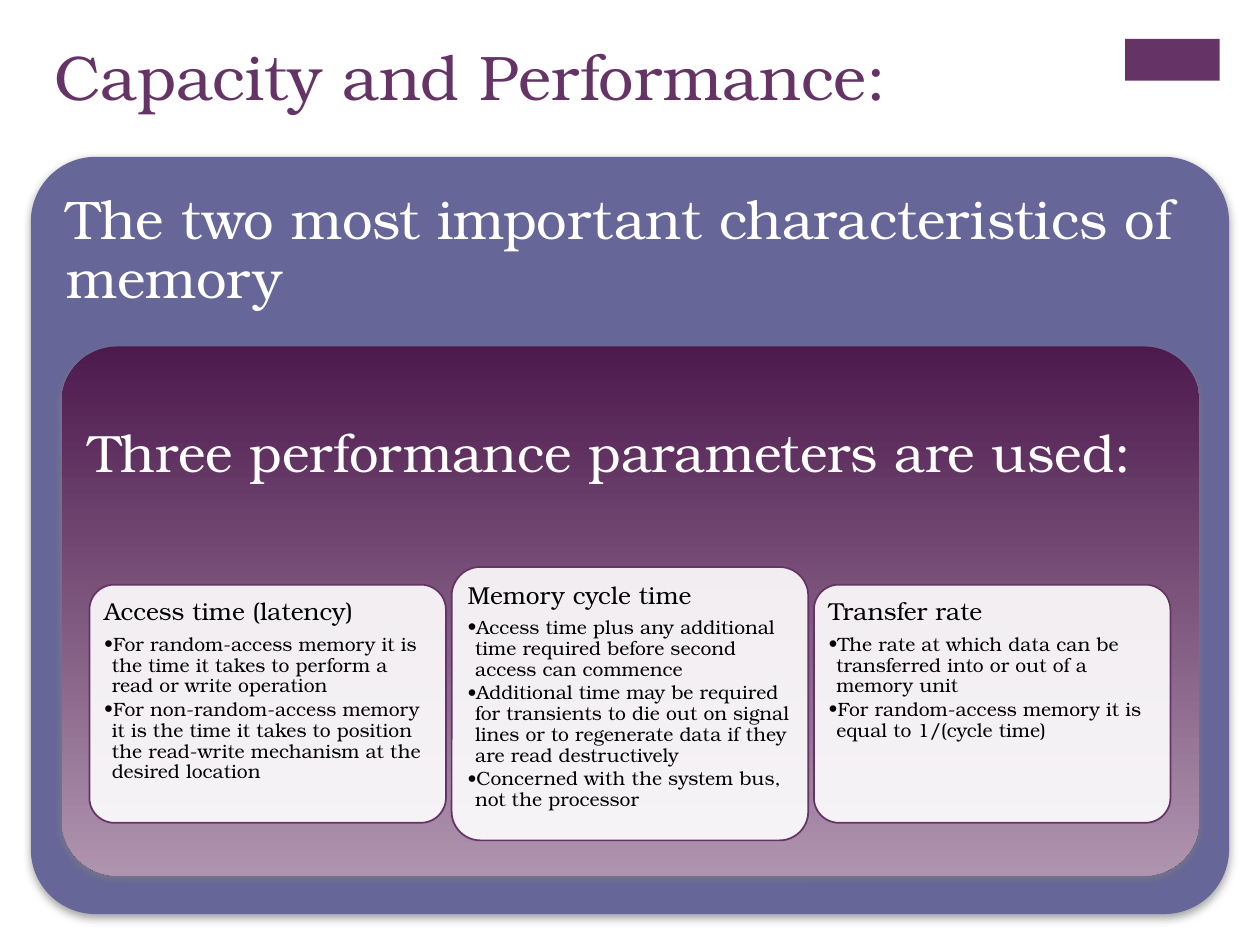
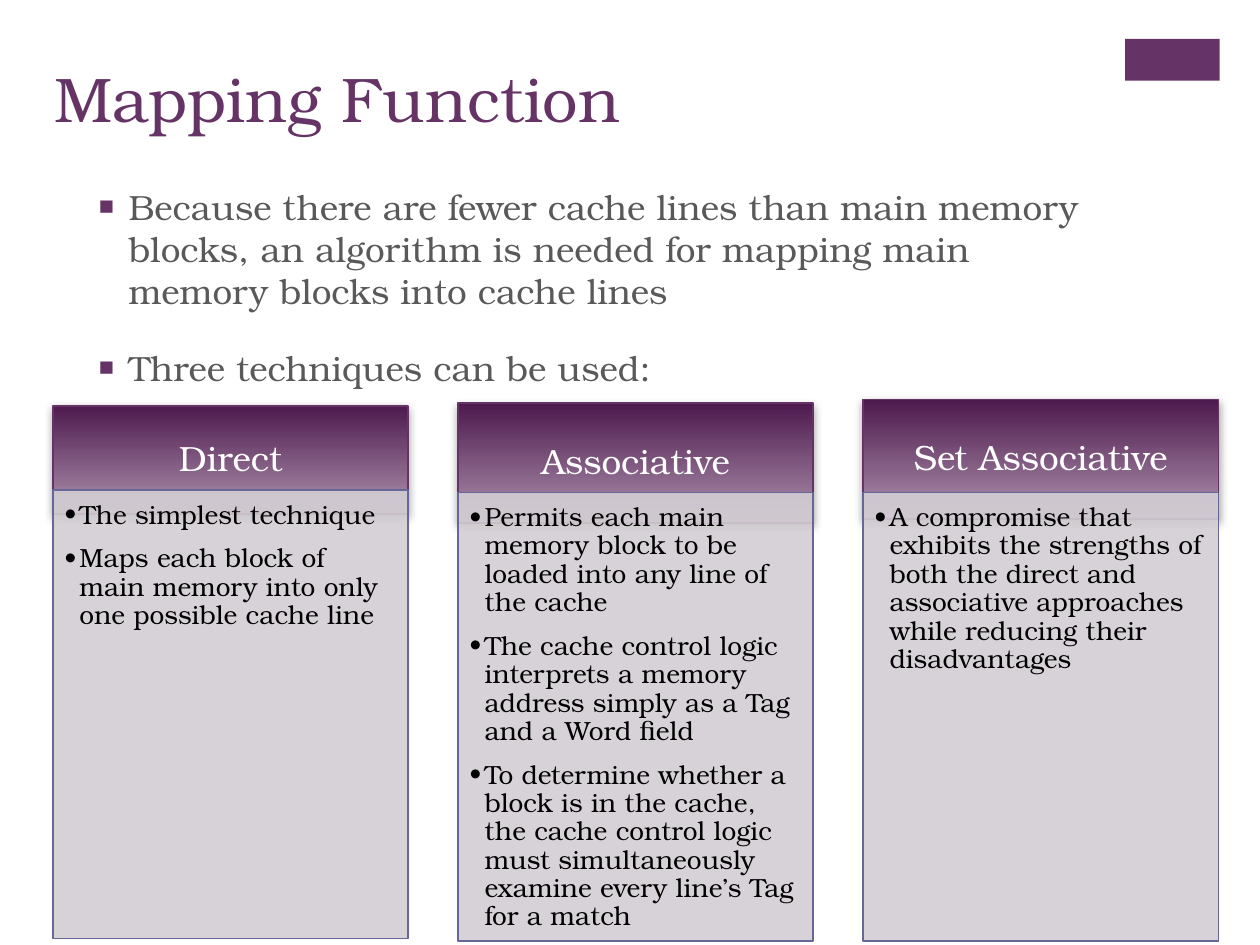
"""Build two slides on memory performance and cache mapping."""
from pptx import Presentation
from pptx.dml.color import RGBColor
from pptx.enum.shapes import MSO_SHAPE
from pptx.enum.text import MSO_ANCHOR, MSO_AUTO_SIZE, PP_ALIGN
from pptx.oxml import parse_xml
from pptx.oxml.ns import nsdecls, qn
from pptx.util import Inches, Pt

RECT, ROUND = MSO_SHAPE.RECTANGLE, MSO_SHAPE.ROUNDED_RECTANGLE
TOP, MIDDLE = MSO_ANCHOR.TOP, MSO_ANCHOR.MIDDLE
LEFT, CENTER = PP_ALIGN.LEFT, PP_ALIGN.CENTER
NONE = MSO_AUTO_SIZE.NONE
FONT = "TeX Gyre Bonum"
HUES = {"plum": "663366", "slate": "666699", "deep": "4D1A4D", "mauve": "AF94AF",
        "pale": "D3CED3", "white": "FFFFFF", "black": "000000", "text": "595959",
        "shade": "808080"}

deck = Presentation()
deck.slide_width, deck.slide_height = Inches(10), Inches(7.5)
COL, ROW = deck.slide_width / 100, deck.slide_height / 75

LOOKS = {
    "tag": {"fill": "plum"},
    "panel": {"fill": "slate", "line": ("slate", 0.75), "shade": True},
    "inner": {"fill": ("deep", "mauve"), "shade": True},
    "card": {"fill": "white", "alpha": 90, "line": ("plum", 1)},
    "band": {"fill": ("deep", "mauve"), "line": ("plum", 1), "shade": True},
    "list": {"fill": "pale", "alpha": 90, "line": ("slate", 1)},
}
TEXTS = {
    "title": {"size": 36, "hue": "plum"},
    "body": {"size": 20, "hue": "text", "before": 20, "mark": "■", "dent": 2.5,
             "tint": "plum", "scale": 75},
    "panel": {"size": 31, "hue": "white", "line": 0.9},
    "inner": {"size": 30, "hue": "white", "line": 0.9},
    "head": {"size": 14, "hue": "black", "line": 0.9, "after": 4.9},
    "point": {"size": 11, "hue": "black", "line": 0.9, "after": 1.65, "mark": "•", "dent": 0.6},
    "band": {"size": 20, "hue": "white", "line": 0.9, "align": CENTER},
    "list": {"size": 15, "hue": "black", "line": 0.9, "after": 8.7, "mark": "•", "dent": 1.2},
}


def box(slide, kind, at, look, pads=(1, 0.5, 1, 0.5), bend=None):
    """Draw a styled shape on the grid."""
    left, top, wide, high = at
    shape = slide.shapes.add_shape(kind, int(left * COL), int(top * ROW),
                                   int(wide * COL), int(high * ROW))
    if bend:
        shape.adjustments[0] = bend
    style = LOOKS[look]
    hue = style["fill"]
    if isinstance(hue, tuple):
        shape.fill.gradient()
        shape.fill.gradient_angle = 270
        for stop, name, spot in zip(shape.fill.gradient_stops, hue, (0, 1)):
            stop.color.rgb = RGBColor.from_string(HUES[name])
            stop.position = spot
    else:
        shape.fill.solid()
        shape.fill.fore_color.rgb = RGBColor.from_string(HUES[hue])
    props = shape._element.spPr
    if "alpha" in style:
        props.find(".//" + qn("a:srgbClr")).append(
            parse_xml(f'<a:alpha {nsdecls("a")} val="{style["alpha"] * 1000}"/>'))
    if "line" in style:
        name, width = style["line"]
        shape.line.color.rgb = RGBColor.from_string(HUES[name])
        shape.line.width = Pt(width)
    else:
        shape.line.fill.background()
    shape.shadow.inherit = False
    if "shade" in style:
        props.find(qn("a:effectLst")).append(parse_xml(
            f'<a:outerShdw {nsdecls("a")} blurRad="{Pt(5)}" dist="{Pt(2)}" dir="5400000" '
            f'rotWithShape="0"><a:srgbClr val="{HUES["shade"]}"><a:alpha val="75000"/>'
            '</a:srgbClr></a:outerShdw>'))
    for side, pad in zip(("left", "top", "right", "bottom"), pads):
        setattr(shape.text_frame, "margin_" + side, int(pad * COL))
    return shape


def write(frame, lines, look, anchor=TOP):
    """Add styled paragraphs to a text frame."""
    style = TEXTS[look]
    frame.word_wrap, frame.auto_size, frame.vertical_anchor = True, NONE, anchor
    for line in lines:
        first = not frame.text
        para = frame.paragraphs[0] if first else frame.add_paragraph()
        form = {"alignment": style.get("align", LEFT),
                "line_spacing": style.get("line", 1.0),
                "space_before": Pt(0 if first else style.get("before", 0)),
                "space_after": Pt(style.get("after", 0))}
        for key, value in form.items():
            setattr(para, key, value)
        if "mark" in style:
            props = para._p.get_or_add_pPr()
            dent = int(style["dent"] * COL)
            props.set("marL", str(dent))
            props.set("indent", str(-dent))
            tint = HUES[style.get("tint", style["hue"])]
            for part in (f'buClr {nsdecls("a")}><a:srgbClr val="{tint}"/></a:buClr>',
                         f'buSzPct {nsdecls("a")} val="{style.get("scale", 100) * 1000}"/>',
                         f'buFont {nsdecls("a")} typeface="{FONT}"/>',
                         f'buChar {nsdecls("a")} char="{style["mark"]}"/>'):
                props.append(parse_xml("<a:" + part))
        run = para.add_run()
        run.text = line
        for key, value in {"name": FONT, "size": Pt(style["size"]), "bold": False}.items():
            setattr(run.font, key, value)
        run.font.color.rgb = RGBColor.from_string(HUES[style["hue"]])


slides = []
for layout, name, top, high in ((5, "Capacity and Performance:", 2.5, 12.2),
                                (1, "Mapping Function", 4.2, 10.5)):
    slide = deck.slides.add_slide(deck.slide_layouts[layout])
    title = slide.shapes.title
    title.left, title.top = int(3.3 * COL), int(top * ROW)
    title.width, title.height = int(82.6 * COL), int(high * ROW)
    write(title.text_frame, [name], "title")
    slides.append(slide)
speed, cache = slides

tag = box(speed, RECT, (89.3, 3.1, 7.5, 3.3), "tag")
tag._element.nvSpPr.cNvPr.set("id", "20")
deck.slide_master.shapes._spTree.append(tag._element)

panel = box(speed, ROUND, (2.5, 12.5, 95, 60), "panel", (1.3,) * 4, 0.085)
write(panel.text_frame, ["The two most important characteristics of memory"], "panel")
inner = box(speed, ROUND, (4.9, 27.5, 90.3, 42), "inner", (0.8, 5.1, 0.8, 0.8), 0.105)
write(inner.text_frame, ["Three performance parameters are used:"], "inner")

CARDS = [
    ("Access time (latency)", 46.4, 18.9, [
        "For random-access memory it is the time it takes to perform a read or write operation",
        "For non-random-access memory it is the time it takes to position the read-write "
        "mechanism at the desired location"]),
    ("Memory cycle time", 45, 21.7, [
        "Access time plus any additional time required before second access can commence",
        "Additional time may be required for transients to die out on signal lines or to "
        "regenerate data if they are read destructively",
        "Concerned with the system bus, not the processor"]),
    ("Transfer rate", 46.4, 18.9, [
        "The rate at which data can be transferred into or out of a memory unit",
        "For random-access memory it is equal to 1/(cycle time)"]),
]
for num, (head, top, high, points) in enumerate(CARDS):
    card = box(speed, ROUND, (7.1 + num * 28.75, top, 28.3, high), "card", (0.6,) * 4, 0.105)
    write(card.text_frame, [head], "head")
    write(card.text_frame, points, "point")

body = cache.placeholders[1]
body.left, body.top = int(6.7 * COL), int(14.2 * ROW)
body.width, body.height = int(82.6 * COL), int(20.8 * ROW)
write(body.text_frame, [
    "Because there are fewer cache lines than main memory blocks, an algorithm is needed "
    "for mapping main memory blocks into cache lines",
    "Three techniques can be used:"], "body")

WAYS = [
    ("Direct", 32.2, 8.6, 38.9, [
        "The simplest technique",
        "Maps each block of main memory into only one possible cache line"]),
    ("Associative", 32, 9.5, 39.1, [
        "Permits each main memory block to be loaded into any line of the cache",
        "The cache control logic interprets a memory address simply as a Tag and a Word field",
        "To determine whether a block is in the cache, the cache control logic must "
        "simultaneously examine every line’s Tag for a match"]),
    ("Set Associative", 31.7, 9.5, 39.1, [
        "A compromise that exhibits the strengths of both the direct and associative "
        "approaches while reducing their disadvantages"]),
]
for num, (head, top, high, base, points) in enumerate(WAYS):
    left = 4.2 + num * 32.15
    band = box(cache, RECT, (left, top, 28.2, high), "band", (1.6, 0.9, 1.6, 0.9))
    write(band.text_frame, [head], "band", MIDDLE)
    pane = box(cache, RECT, (left, base, 28.2, 35.6), "list", (0.9, 0.9, 1.2, 1.3))
    write(pane.text_frame, points, "list")

deck.save("out.pptx")
